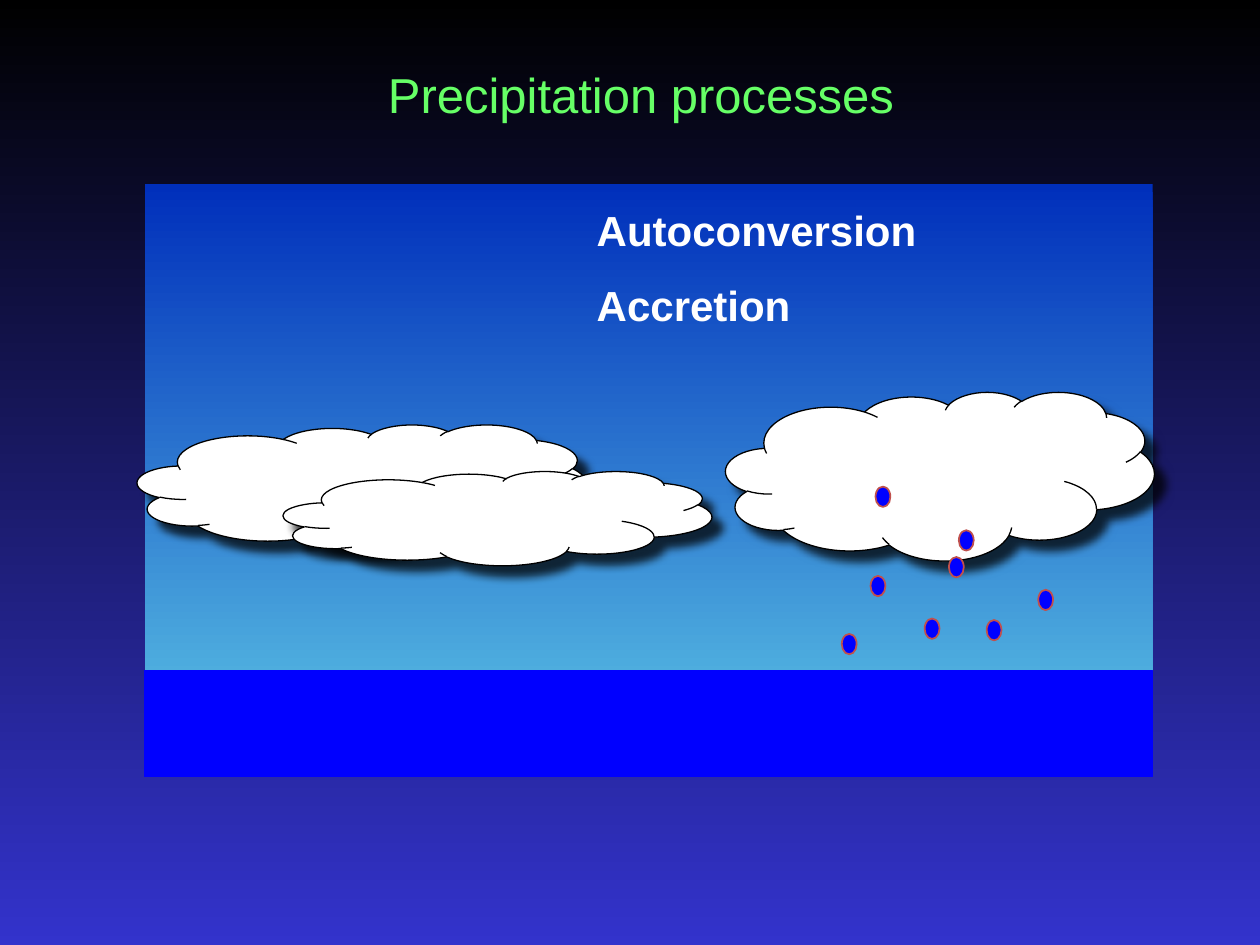
from dataclasses import dataclass

from lxml import etree
from pptx import Presentation
from pptx.dml.color import RGBColor
from pptx.enum.shapes import MSO_SHAPE
from pptx.enum.text import MSO_ANCHOR, MSO_AUTO_SIZE, PP_ALIGN
from pptx.oxml.ns import qn
from pptx.util import Cm, Pt

RECTANGLE, OVAL, CLOUD = MSO_SHAPE.RECTANGLE, MSO_SHAPE.OVAL, MSO_SHAPE.CLOUD
LEFT, CENTER = PP_ALIGN.LEFT, PP_ALIGN.CENTER
TOP, NO_AUTO_SIZE = MSO_ANCHOR.TOP, MSO_AUTO_SIZE.NONE
TITLE_ONLY = 5


@dataclass(frozen=True)
class Theme:
    """Colours, font and type sizes of the slide."""
    font: str = "Arial"
    title_size: int = 28
    label_size: int = 24
    title: str = "66FF66"
    white: str = "FFFFFF"
    black: str = "000000"
    water: str = "0000FF"
    drop_line: str = "C0504D"
    night: tuple = ("3333CC", "000000")
    sky: tuple = ("002FBB", "4FAFDF")


THEME = Theme()
TITLE_BOX = (2.34, 1.17, 21.16, 6.86)
SCENE_BOX = (2.92, 3.71, 20.32, 11.94)
SKY_HEIGHT, SEA_HEIGHT = 10.03, 2.13
CLOUDS = [(-0.15, 4.85, 9.07, 2.49), (2.79, 5.79, 8.64, 1.9), (11.71, 4.19, 8.64, 3.4)]
DROP_SIZE = (0.3, 0.41)
DROPS = [(14.63, 7.9), (16.41, 6.98), (16.97, 8.79), (18.01, 8.18),
         (15.72, 8.76), (16.21, 7.52), (14.05, 9.07), (14.73, 6.1)]
LABEL_BOX = (8.86, 0.28, 7.87, 2.79)


def lengths(box):
    """Turn a box in centimetres into slide lengths."""
    return [Cm(value) for value in box]


def inside(box, part):
    """Shift a part by the corner of the box that holds it."""
    return (box[0] + part[0], box[1] + part[1], *part[2:])


def write_text(shape, lines, *, size, color, bold=False, align=LEFT, gap=0):
    """Write lines as paragraphs, with a gap in points between them."""
    frame = shape.text_frame
    frame.word_wrap = True
    frame.auto_size = NO_AUTO_SIZE
    frame.vertical_anchor = TOP
    frame.text = "\n".join(lines)
    for paragraph in frame.paragraphs:
        paragraph.alignment = align
        paragraph.space_before = Pt(0)
        paragraph.space_after = Pt(gap)
        paragraph.line_spacing = 1.0
        font = paragraph.runs[0].font
        font.name, font.size, font.bold = THEME.font, Pt(size), bold
        font.color.rgb = RGBColor.from_string(color)


def fill_gradient(fill, colors, angle):
    """Fill with a two-colour linear gradient."""
    fill.gradient()
    fill.gradient_angle = angle
    for stop, color in zip(fill.gradient_stops, colors):
        stop.color.rgb = RGBColor.from_string(color)


def add_figure(shapes, kind, box, *, fill=None, line=None, line_width=0.75):
    """Add a preset shape without a shadow."""
    shape = shapes.add_shape(kind, *lengths(box))
    shape.shadow.inherit = False
    if fill:
        shape.fill.solid()
        shape.fill.fore_color.rgb = RGBColor.from_string(fill)
    if line:
        shape.line.color.rgb = RGBColor.from_string(line)
        shape.line.width = Pt(line_width)
    else:
        shape.line.fill.background()
    return shape


def add_drop_shadow(shape):
    """Cast a soft black shadow to the lower right."""
    effects = shape._element.spPr.find(qn("a:effectLst"))
    shadow = etree.SubElement(effects, qn("a:outerShdw"), blurRad=str(Pt(5)),
                              dist=str(Pt(8.5)), dir="2700000", algn="ctr",
                              rotWithShape="0")
    color = etree.SubElement(shadow, qn("a:srgbClr"), val=THEME.black)
    etree.SubElement(color, qn("a:alpha"), val="75000")


def add_title(slide, box):
    """Place and format the title placeholder."""
    title = slide.shapes.title
    title.left, title.top, title.width, title.height = lengths(box)
    write_text(title, ["Precipitation processes"], size=THEME.title_size,
               color=THEME.title, align=CENTER)


def add_backdrop(slide, box):
    """Draw the sky and the sea along the foot of the box."""
    left, top, width, height = box
    sky = add_figure(slide.shapes, RECTANGLE, (left, top, width, SKY_HEIGHT))
    fill_gradient(sky.fill, THEME.sky, 270)
    sea_top = top + height - SEA_HEIGHT
    add_figure(slide.shapes, RECTANGLE, (left, sea_top, width, SEA_HEIGHT),
               fill=THEME.water, line=THEME.water)


def add_clouds(slide, box):
    """Draw the group of clouds."""
    group = slide.shapes.add_group_shape()
    for cloud_box in CLOUDS:
        cloud = add_figure(group.shapes, CLOUD, inside(box, cloud_box),
                           fill=THEME.white, line=THEME.black)
        add_drop_shadow(cloud)


def add_raindrops(slide, box):
    """Draw the group of raindrops."""
    group = slide.shapes.add_group_shape()
    for corner in DROPS:
        add_figure(group.shapes, OVAL, inside(box, corner + DROP_SIZE),
                   fill=THEME.water, line=THEME.drop_line, line_width=1)


def add_process_names(slide, box):
    """Name the processes at the top of the sky."""
    label = slide.shapes.add_textbox(*lengths(inside(box, LABEL_BOX)))
    write_text(label, ["Autoconversion", "Accretion"], size=THEME.label_size,
               color=THEME.white, bold=True, gap=14)


def main():
    """Build and save the presentation."""
    presentation = Presentation()
    presentation.slide_width, presentation.slide_height = Cm(25.4), Cm(19.05)
    slide = presentation.slides.add_slide(presentation.slide_layouts[TITLE_ONLY])
    fill_gradient(slide.background.fill, THEME.night, 90)
    add_title(slide, TITLE_BOX)
    for add_region in (add_backdrop, add_clouds, add_raindrops, add_process_names):
        add_region(slide, SCENE_BOX)
    presentation.save("out.pptx")


if __name__ == "__main__":
    main()
